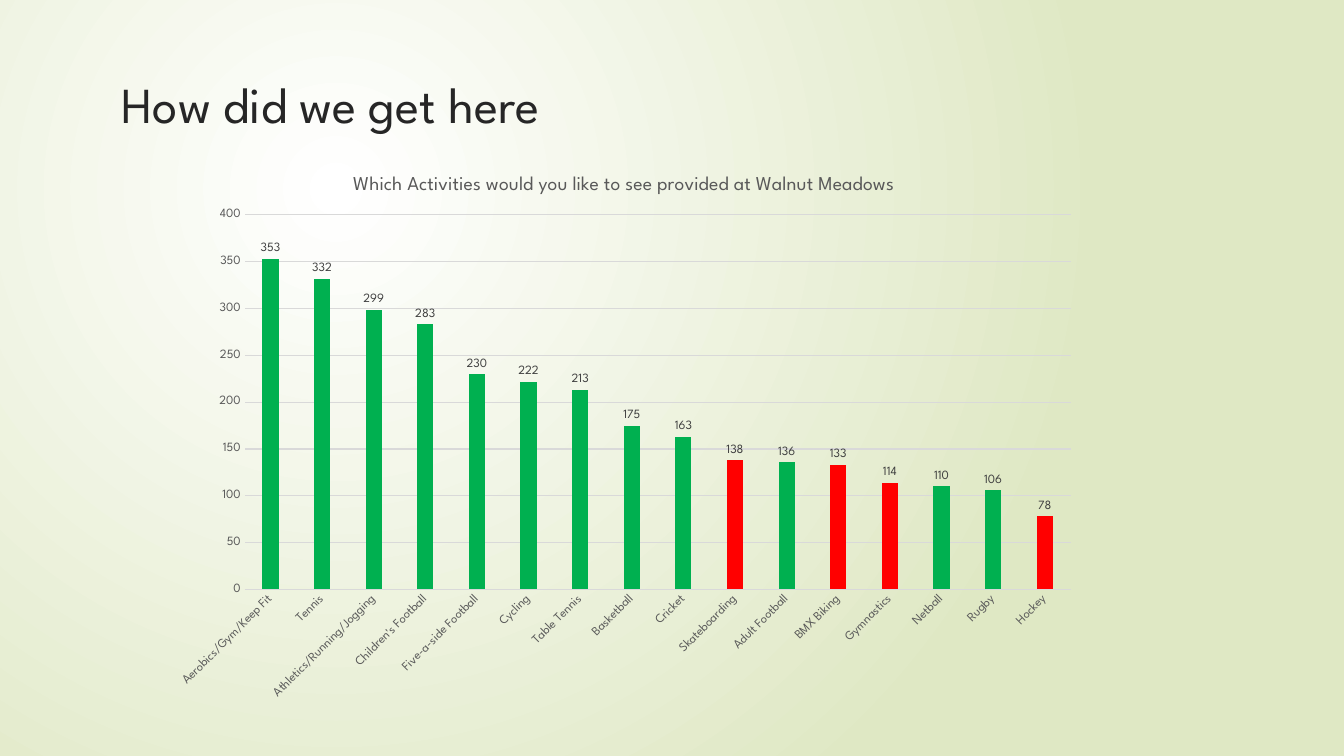
from lxml import etree
from pptx import Presentation
from pptx import util as u
from pptx.chart.data import CategoryChartData
from pptx.dml.color import RGBColor
from pptx.enum import chart as ch
from pptx.enum import text as t
from pptx.oxml import parse_xml
from pptx.oxml.ns import nsdecls, qn

VOTES = {
    "Aerobics/Gym/Keep Fit": 353, "Tennis": 332, "Athletics/Running/Jogging": 299,
    "Children's Football": 283, "Five-a-side Football": 230, "Cycling": 222,
    "Table Tennis": 213, "Basketball": 175, "Cricket": 163, "Skateboarding": 138,
    "Adult Football": 136, "BMX Biking": 133, "Gymnastics": 114, "Netball": 110,
    "Rugby": 106, "Hockey": 78,
}
HIGHLIGHTED = {"Skateboarding", "BMX Biking", "Gymnastics", "Hockey"}


def write(frame, words, **style):
    frame.text = words
    style_font(frame.paragraphs[0].runs[0].font, **style)


def style_font(font, size, color, name):
    font.size = u.Pt(size)
    font.bold = False
    font.name = name
    font.color.rgb = RGBColor.from_string(color)


class Deck:
    """Style and current slide, with a method for each kind of element."""

    FONT = "League Spartan"
    COLORS = {
        "glow": "FFFFFF", "edge": "DFE8C4", "heading": "262626", "axis": "595959",
        "value": "404040", "grid": "D9D9D9", "bar": "00B050", "highlight": "FF0000",
    }

    def __init__(self):
        self.prs = Presentation()
        self.prs.slide_width, self.prs.slide_height = u.Cm(33.87), u.Cm(19.05)
        self.slide = self.prs.slides.add_slide(self.prs.slide_layouts[6])

    def rgb(self, key):
        return RGBColor.from_string(self.COLORS[key])

    def type(self, size, color):
        return dict(size=size, color=self.COLORS[color], name=self.FONT)

    def background(self):
        fill = self.slide.background.fill
        fill.gradient()
        for stop, key in zip(fill.gradient_stops, ("glow", "edge")):
            stop.color.rgb = self.rgb(key)
        gradient = self.slide.element.find(".//" + qn("a:gradFill"))
        gradient.remove(gradient.find(qn("a:lin")))
        circle = etree.SubElement(gradient, qn("a:path"), path="circle")
        etree.SubElement(circle, qn("a:fillToRect"),
                         l="50000", t="50000", r="100000", b="100000")

    def heading(self, words, left, top, width, height):
        frame = self.slide.shapes.add_textbox(
            u.Cm(left), u.Cm(top), u.Cm(width), u.Cm(height)).text_frame
        frame.word_wrap = True
        frame.vertical_anchor = t.MSO_ANCHOR.TOP
        write(frame, words, **self.type(36, "heading"))

    def columns(self, title, votes, highlighted, left, top, width, height):
        data = CategoryChartData()
        data.categories = list(votes)
        data.add_series("Series 1", list(votes.values()))
        chart = self.slide.shapes.add_chart(
            ch.XL_CHART_TYPE.COLUMN_CLUSTERED,
            u.Cm(left), u.Cm(top), u.Cm(width), u.Cm(height), data).chart
        chart.has_legend = False
        style_font(chart.font, 10, "000000", self.FONT)
        chart.has_title = True
        write(chart.chart_title.text_frame, title, **self.type(14, "axis"))
        chart.chart_title.include_in_layout = False
        self.axes(chart)
        self.bars(chart.plots[0], votes, highlighted)
        self.plot_area(chart, x=0.092, y=0.104, w=0.888, h=0.643)

    def axes(self, chart):
        activities, counts = chart.category_axis, chart.value_axis
        for axis in (activities, counts):
            axis.major_tick_mark = axis.minor_tick_mark = ch.XL_TICK_MARK.NONE
            style_font(axis.tick_labels.font, **self.type(9, "axis"))
        counts.minimum_scale, counts.maximum_scale, counts.major_unit = 0, 400, 50
        counts.format.line.fill.background()
        counts.has_major_gridlines = True
        for line in (activities.format.line, counts.major_gridlines.format.line):
            line.color.rgb = self.rgb("grid")
            line.width = u.Pt(0.75)
        body = activities._element.find(qn("c:txPr")).find(qn("a:bodyPr"))
        body.set("rot", "-2700000")
        body.set("vert", "horz")

    def bars(self, plot, votes, highlighted):
        plot.gap_width = 219
        plot.vary_by_categories = False
        series = plot.series[0]
        series.format.fill.solid()
        series.format.fill.fore_color.rgb = self.rgb("bar")
        for index, activity in enumerate(votes):
            if activity in highlighted:
                fill = series.points[index].format.fill
                fill.solid()
                fill.fore_color.rgb = self.rgb("highlight")
        labels = series.data_labels
        labels.show_value = True
        labels.position = ch.XL_LABEL_POSITION.OUTSIDE_END
        style_font(labels.font, **self.type(9, "value"))

    def plot_area(self, chart, **bounds):
        area = chart._chartSpace.find(".//" + qn("c:plotArea"))
        for old in area.findall(qn("c:layout")):
            area.remove(old)
        modes = '<c:xMode val="edge"/><c:yMode val="edge"/>'
        sizes = "".join(f'<c:{key} val="{value}"/>' for key, value in bounds.items())
        area.insert(0, parse_xml(
            f'<c:layout {nsdecls("c")}><c:manualLayout><c:layoutTarget val="inner"/>'
            f"{modes}{sizes}</c:manualLayout></c:layout>"))


def main():
    deck = Deck()
    deck.background()
    deck.heading("How did we get here", 2.82, 1.73, 29.13, 3.56)
    deck.columns("Which Activities would you like to see provided at Walnut Meadows",
                 VOTES, HIGHLIGHTED, 4.01, 3.89, 23.44, 14.68)
    deck.prs.save("out.pptx")


if __name__ == "__main__":
    main()
